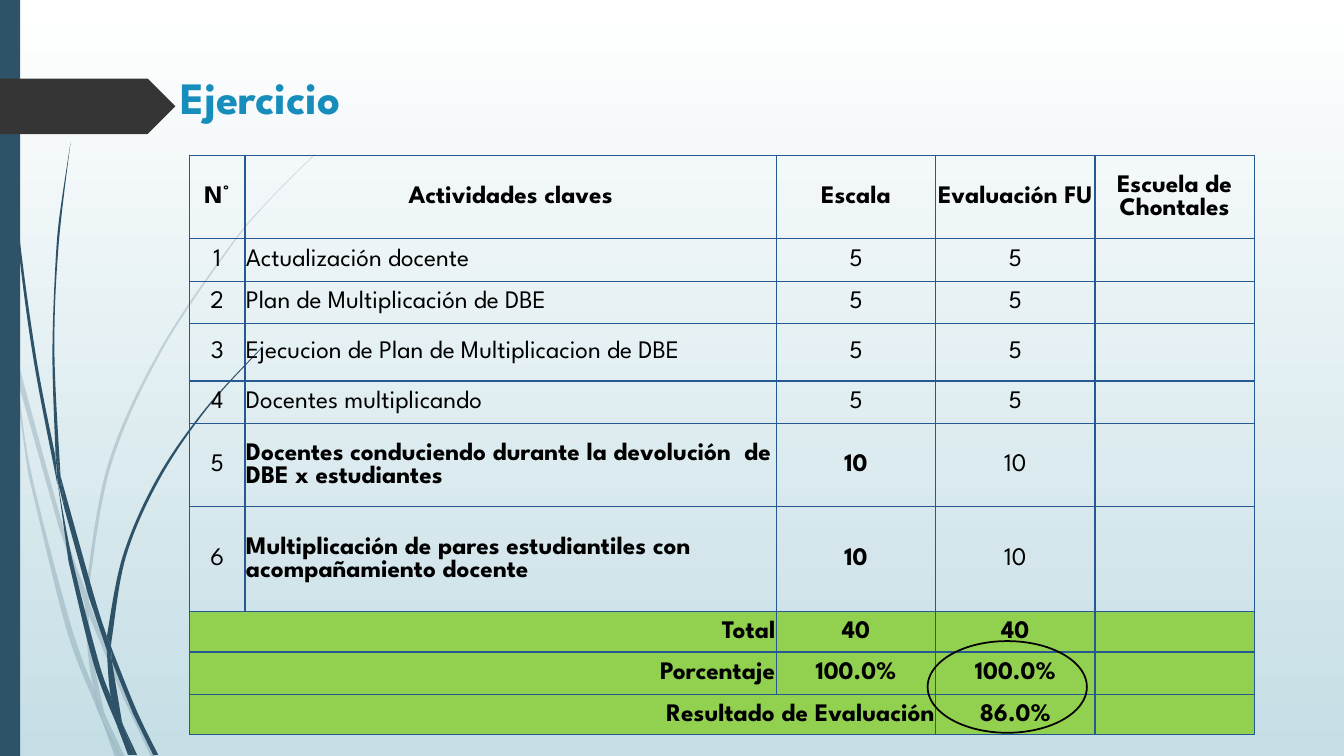
from lxml.etree import SubElement
from pptx import Presentation
from pptx.dml.color import RGBColor
from pptx.enum.shapes import MSO_SHAPE as Preset
from pptx.enum.text import MSO_ANCHOR as Anchor, PP_ALIGN as Align
from pptx.oxml.ns import qn
from pptx.util import Inches, Pt

FONT = "League Spartan"
WHITE = RGBColor(0xFF, 0xFF, 0xFF)
BLACK = RGBColor(0, 0, 0)
MIST = RGBColor(0xC5, 0xDE, 0xE5)
NAVY = RGBColor(0x2E, 0x53, 0x69)
CHARCOAL = RGBColor(0x35, 0x35, 0x35)
TITLE_BLUE = RGBColor(0x17, 0x8D, 0xBB)
GRID_BLUE = RGBColor(0x26, 0x59, 0x91)
GREEN = RGBColor(0x92, 0xD0, 0x50)

PALE_BLADES = [
    ([(0.11, 3.5), (0.09, 3.22), (0, 2.82)], [(0, 2.99), (0.1, 3.44)]),
    ([(0.58, 5.22), (0.84, 5.99)], [(0.85, 5.86), (0.62, 5.2), (0.14, 3.45)], [(0.17, 3.76), (0.58, 5.22)]),
    ([(0.88, 5.96), (0.88, 6.1)], [(1.23, 6.94), (1.5, 7.51)], [(1.55, 7.51), (1.27, 6.92), (0.92, 6.07)]),
    ([(1.19, 7.51), (1.24, 7.51)], [(1.05, 7.11)]),
    ([(0.93, 6.83), (0.7, 6.19), (0.31, 4.69), (0.17, 3.76), (0.11, 3.5)],
     [(0.28, 4.7), (0.65, 6.21), (0.92, 6.93), (1.01, 7.14)], [(0.99, 7.07)]),
    ([(0.84, 5.99), (0.87, 6.46), (0.93, 6.83), (1.05, 7.11)], [(1.03, 7.06), (0.91, 6.46), (0.88, 6.1)]),
    ([(0.88, 5.84), (1.1, 4.62), (1.6, 3.49), (2.29, 2.45), (2.68, 1.98), (3.12, 1.54)],
     [(3.12, 1.53), (2.68, 1.97), (2.28, 2.44), (1.58, 3.48), (1.07, 4.61), (0.85, 5.84)], [(0.88, 5.96)]),
    ([(1.01, 7.14), (1.14, 7.51)], [(1.19, 7.51)]),
    ([(0.88, 6.1), (0.88, 5.96)], [(0.85, 5.86), (0.84, 5.99)]),
    ([(0.93, 6.83), (1.01, 7.14), (1.19, 7.51)], [(1.05, 7.11), (0.96, 6.92)]),
]
DARK_BLADES = [
    ([(0.07, 1.1), (0.17, 2.33), (0.33, 3.55), (0.57, 4.81)],
     [(0.55, 4.53), (0.36, 3.55), (0.19, 2.32), (0.08, 1.09), (0.04, 0)], [(0.03, 0), (0.07, 1.1)]),
    ([(0.88, 5.92), (1.06, 6.45)], [(1.06, 6.31), (0.93, 5.9), (0.6, 4.72)], [(0.64, 5.05), (0.88, 5.92)]),
    ([(1.1, 6.41), (1.11, 6.56)], [(1.32, 7.08), (1.52, 7.49)], [(1.57, 7.49), (1.36, 7.06), (1.13, 6.49)]),
    ([(1.1, 6.91), (0.98, 6.57), (0.72, 5.56), (0.57, 4.77)],
     [(0.68, 5.57), (0.93, 6.59), (1.17, 7.22)], [(1.16, 7.17)]),
    ([(0.6, 4.72), (0.54, 3.49), (0.58, 2.45), (0.7, 1.41)],
     [(0.62, 1.93), (0.56, 2.45), (0.52, 3.49), (0.55, 4.49)]),
    ([(1.33, 7.49), (1.36, 7.49)], [(1.22, 7.19)]),
    ([(0.57, 4.77), (0.64, 5.05)], [(0.6, 4.72), (0.55, 4.49)]),
    ([(1.11, 6.33), (1.25, 5.52), (1.58, 4.76), (2.05, 4.06), (2.61, 3.44)],
     [(2.6, 3.44), (2.04, 4.05), (1.56, 4.74), (1.22, 5.51), (1.06, 6.31)], [(1.1, 6.41)]),
    ([(1.17, 7.22), (1.27, 7.49)], [(1.31, 7.49)]),
    ([(1.06, 6.45), (1.1, 6.91), (1.22, 7.19)], [(1.21, 7.16), (1.11, 6.56)]),
    ([(1.06, 6.45), (1.11, 6.56)], [(1.1, 6.41), (1.06, 6.31)]),
    ([(1.1, 6.91), (1.17, 7.22), (1.3, 7.49)], [(1.33, 7.49), (1.22, 7.19)]),
]

COLUMN_WIDTHS = [0.55, 5.27, 1.58, 1.58, 1.58]
ROW_HEIGHTS = [0.83, 0.42, 0.42, 0.57, 0.42, 0.83, 1.04, 0.29, 0.42, 0.29]
ROWS = [
    ["N°", "Actividades claves", "Escala", "Evaluación FU ", "Escuela de Chontales"],
    ["1", "Actualización docente", "5", "5", ""],
    ["2", "Plan de Multiplicación de DBE", "5", "5", ""],
    ["3", "Ejecucion de Plan de Multiplicacion de DBE", "5", "5", ""],
    ["4", "Docentes multiplicando", "5", "5", ""],
    ["5", "Docentes conduciendo durante la devolución  de DBE x estudiantes", "10", "10", ""],
    ["6", "Multiplicación de pares estudiantiles con acompañamiento docente", "10", "10", ""],
    ["Total", "", "40", "40", ""],
    ["Porcentaje", "", "100.0%", "100.0%", ""],
    ["Resultado de Evaluación", "", "", "86.0%", ""],
]
FIRST_TOTAL = 7
LABEL_ENDS = {7: 1, 8: 1, 9: 2}


def bend_edge(nodes, points):
    padded = [points[0], *points, points[-1]]
    for node, a, b, c, d in zip(nodes, padded, padded[1:], padded[2:], padded[3:]):
        node.tag = qn("a:cubicBezTo")
        node.remove(node[0])
        leave = [q + (r - p) / 6 for p, q, r in zip(a, b, c)]
        arrive = [q - (r - p) / 6 for p, q, r in zip(b, c, d)]
        for x, y in (leave, arrive, c):
            SubElement(node, qn("a:pt"), x=str(round(x)), y=str(round(y)))


def add_blade(page, edges, opacity):
    points = [(Inches(x), Inches(y)) for edge in edges for x, y in edge]
    builder = page.shapes.build_freeform(*points[0])
    builder.add_line_segments(points[1:], close=True)
    blade = builder.convert_to_shape()
    paint(blade, NAVY)
    if opacity < 100:
        color = blade.fill._xPr.find(qn("a:solidFill"))[0]
        SubElement(color, qn("a:alpha"), val=str(opacity * 1000))
    nodes = list(next(blade._element.iter(qn("a:path"))))
    local = [(int(node[0].get("x")), int(node[0].get("y"))) for node in nodes[:len(points)]]
    start = 0
    for edge in edges:
        end = start + len(edge)
        bend_edge(nodes[start + 1:end], local[start:end])
        start = end


def paint(shape, color):
    shape.shadow.inherit = False
    shape.fill.solid()
    shape.fill.fore_color.rgb = color
    shape.line.fill.background()


def add_block(page, preset, left, top, width, height, color):
    block = page.shapes.add_shape(preset, Inches(left), Inches(top), Inches(width), Inches(height))
    paint(block, color)


def style_text(frame, size, color, bold, align=Align.LEFT):
    for para in frame.paragraphs:
        para.alignment = align
        for span in para.runs:
            span.font.name = FONT
            span.font.size = Pt(size)
            span.font.bold = bold
            span.font.color.rgb = color


def add_title(page):
    box = page.shapes.add_textbox(Inches(1.69), Inches(0.63), Inches(7.9), Inches(0.78))
    frame = box.text_frame
    frame.word_wrap = True
    frame.vertical_anchor = Anchor.MIDDLE
    frame.margin_bottom = Inches(0.18)
    frame.text = "Ejercicio"
    style_text(frame, 32, TITLE_BLUE, True)


def add_borders(cell):
    properties = cell._tc.get_or_add_tcPr()
    for side in ("lnL", "lnR", "lnT", "lnB"):
        line = SubElement(properties, qn(f"a:{side}"), w=str(Pt(1)))
        fill = SubElement(line, qn("a:solidFill"))
        SubElement(fill, qn("a:srgbClr"), val=str(GRID_BLUE))


def fill_cell(cell, text, row, column):
    is_total = row >= FIRST_TOTAL
    is_bold = row == 0 or is_total or (row in (5, 6) and column in (1, 2))
    add_borders(cell)
    if is_total:
        cell.fill.solid()
        cell.fill.fore_color.rgb = GREEN
    else:
        cell.fill.background()
    if text:
        cell.margin_left = cell.margin_right = cell.margin_top = Inches(0.01)
        cell.margin_bottom = 0
        cell.vertical_anchor = Anchor.MIDDLE
        align = Align.RIGHT if is_total and column == 0 else Align.CENTER
        if row > 0 and column == 1:
            align = Align.LEFT
        cell.text_frame.text = text
        style_text(cell.text_frame, 18, BLACK, is_bold, align)


def add_evaluation_table(page):
    frame = page.shapes.add_table(
        len(ROWS), len(COLUMN_WIDTHS), Inches(1.88), Inches(1.54),
        Inches(sum(COLUMN_WIDTHS)), Inches(sum(ROW_HEIGHTS)))
    table = frame.table
    table.first_row = table.horz_banding = False
    for column, width in zip(table.columns, COLUMN_WIDTHS):
        column.width = Inches(width)
    for row, height in zip(table.rows, ROW_HEIGHTS):
        row.height = Inches(height)
    for row, texts in enumerate(ROWS):
        for column, text in enumerate(texts):
            fill_cell(table.cell(row, column), text, row, column)
    for row, last in LABEL_ENDS.items():
        table.cell(row, 0).merge(table.cell(row, last))


def add_result_ring(page):
    ring = page.shapes.add_shape(Preset.OVAL, Inches(9.2), Inches(6.36), Inches(1.58), Inches(0.91))
    ring.shadow.inherit = False
    ring.fill.background()
    ring.line.color.rgb = BLACK
    ring.line.width = Pt(1.25)


def set_background(page):
    fill = page.background.fill
    fill.gradient()
    fill.gradient_angle = 270
    for stop, color, position in zip(fill.gradient_stops, (WHITE, MIST), (0, 1)):
        stop.color.rgb = color
        stop.position = position


def main():
    deck = Presentation()
    deck.slide_width, deck.slide_height = Inches(13.33), Inches(7.5)
    page = deck.slides.add_slide(deck.slide_layouts[6])
    set_background(page)
    for blades, opacity in ((PALE_BLADES, 20), (DARK_BLADES, 100)):
        for edges in blades:
            add_blade(page, edges, opacity)
    add_block(page, Preset.RECTANGLE, 0, 0, 0.2, 7.5, NAVY)
    add_block(page, Preset.PENTAGON, 0, 0.78, 1.74, 0.55, CHARCOAL)
    add_title(page)
    add_evaluation_table(page)
    add_result_ring(page)
    deck.save("out.pptx")


if __name__ == "__main__":
    main()
